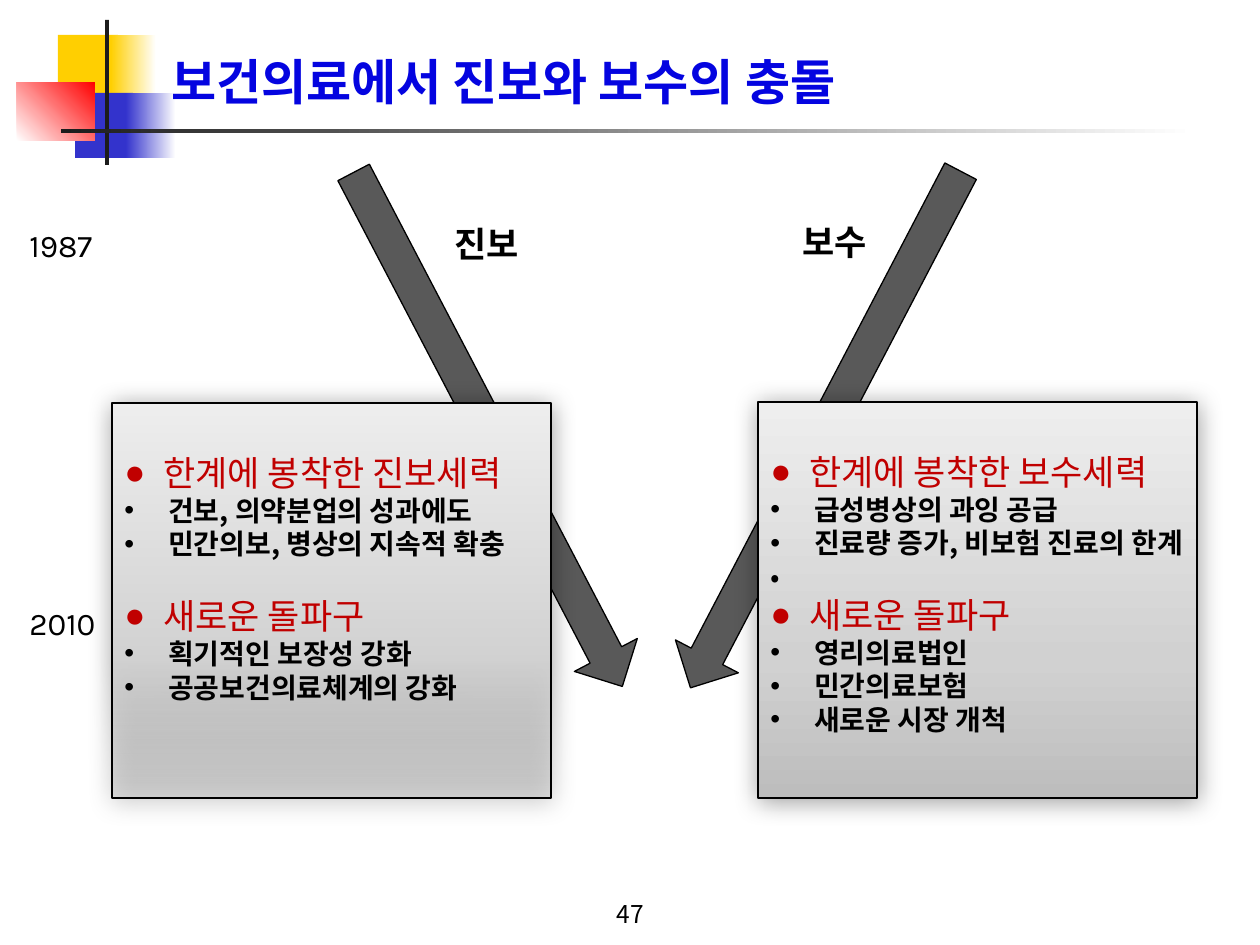
from pptx import Presentation
from pptx.dml.color import RGBColor as Rgb
from pptx.enum.shapes import MSO_SHAPE as Kind
from pptx.enum.text import MSO_ANCHOR as Anchor, MSO_AUTO_SIZE as Fit, PP_ALIGN as Align
from pptx.oxml import parse_xml
from pptx.oxml.ns import nsdecls, qn
from pptx.util import Pt

SCALE = 914400 / 126
WHITE = Rgb(255, 255, 255)
BLACK = Rgb(0, 0, 0)
INK = Rgb(0x1C, 0x1C, 0x1C)
GOLD = Rgb(0xFF, 0xCF, 0x01)
NAVY = Rgb(0x33, 0x33, 0xCC)
RED = Rgb(0xFF, 0, 0)
BLUE = Rgb(0x04, 0x04, 0xE0)
BRICK = Rgb(0xC0, 0, 0)
GRAY = Rgb(0x59, 0x59, 0x59)
DARK = Rgb(0xBD, 0xBD, 0xBD)
MID = Rgb(0xD1, 0xD1, 0xD1)
LIGHT = Rgb(0xEE, 0xEE, 0xEE)
SANS = "Noto Sans CJK KR"


def px(n):
    return round(n * SCALE)


def style(par, size, color, font=SANS, bold=False):
    for run in par.runs:
        run.font.size = Pt(size)
        run.font.bold = bold
        run.font.color.rgb = color
        run.font.name = font
        east = parse_xml(f'<a:ea {nsdecls("a")} typeface="{SANS}"/>')
        run.font._element.find(qn("a:latin")).addnext(east)


def shade(shape, stops, angle):
    marks = "".join(
        f'<a:gs pos="{pos * 1000}"><a:srgbClr val="{color}">'
        f'<a:alpha val="{alpha * 1000}"/></a:srgbClr></a:gs>'
        for pos, color, alpha in stops)
    fill = parse_xml(f'<a:gradFill {nsdecls("a")} rotWithShape="1"><a:gsLst>{marks}'
                     f'</a:gsLst><a:lin ang="{angle * 60000}" scaled="0"/></a:gradFill>')
    shape.element.spPr.find(qn("a:prstGeom")).addnext(fill)


def block(slide, kind, box, fill=None, line=None):
    shape = slide.shapes.add_shape(kind, *map(px, box))
    shape.shadow.inherit = False
    if fill is not None:
        shape.fill.solid()
        shape.fill.fore_color.rgb = fill
    if line is None:
        shape.line.fill.background()
    else:
        shape.line.color.rgb = line
        shape.line.width = Pt(0.75)
    return shape


def emblem(slide, x, y):
    def bar(dx, dy, w, h, start, end=None, angle=0):
        box = (x + dx, y + dy, w, h)
        shape = block(slide, Kind.RECTANGLE, box, start if end is None else None)
        if end is not None:
            shade(shape, [(0, start, 100), (100, end, 100)], angle)

    bar(41, 15, 60, 65, GOLD)
    bar(94, 15, 45, 65, GOLD, WHITE)
    bar(58, 73, 58, 65, NAVY)
    bar(109, 73, 50, 65, NAVY, WHITE)
    bar(0, 62, 78, 59, WHITE, RED, 315)
    bar(88, 0, 4, 145, INK)
    bar(44, 109, 1134, 4, INK, WHITE)


def head(slide, text, box):
    title = slide.shapes.title
    title.left, title.top, title.width, title.height = map(px, box)
    frame = title.text_frame
    frame.text = text
    frame.auto_size = Fit.NONE
    frame.word_wrap = True
    frame.vertical_anchor = Anchor.BOTTOM
    frame.paragraphs[0].alignment = Align.LEFT
    style(frame.paragraphs[0], 28, BLUE, "Arial", True)
    title.element.getparent().append(title.element)


def label(slide, text, box, size, font=SANS, bold=False, align=Align.LEFT):
    frame = slide.shapes.add_textbox(*map(px, box)).text_frame
    frame.text = text
    frame.word_wrap = True
    frame.vertical_anchor = Anchor.MIDDLE
    frame.paragraphs[0].alignment = align
    style(frame.paragraphs[0], size, BLACK, font, bold)


def arrow(slide, box, turn):
    block(slide, Kind.RIGHT_ARROW, box, GRAY, BLACK).rotation = turn


def bullet(par, mark, indent):
    props = par._p.get_or_add_pPr()
    props.set("marL", str(px(indent)))
    props.set("indent", str(-px(indent)))
    props.append(parse_xml(f'<a:buFont {nsdecls("a")} typeface="Arial"/>'))
    props.append(parse_xml(f'<a:buChar {nsdecls("a")} char="{mark}"/>'))


def panel(slide, box, groups, alpha, gap):
    shape = block(slide, Kind.RECTANGLE, box, line=BLACK)
    shade(shape, [(0, DARK, alpha), (35, MID, 100), (100, LIGHT, 100)], 270)
    shape.element.spPr.find(qn("a:effectLst")).append(parse_xml(
        f'<a:outerShdw {nsdecls("a")} blurRad="{Pt(15)}" dist="{Pt(1.6)}" dir="5400000" '
        'rotWithShape="0"><a:srgbClr val="000000"><a:alpha val="38000"/>'
        '</a:srgbClr></a:outerShdw>'))
    frame = shape.text_frame
    frame.word_wrap = False
    frame.vertical_anchor = Anchor.TOP
    frame.margin_top = px(48)
    par = frame.paragraphs[0]
    for i, (name, items) in enumerate(groups):
        if i:
            par = frame.add_paragraph()
            par.space_before = px(gap)
        par.text = name
        par.alignment = Align.LEFT
        par.line_spacing = Pt(24)
        bullet(par, "●", 39)
        style(par, 20, BRICK)
        for item in items:
            par = frame.add_paragraph()
            par.text = item
            par.alignment = Align.LEFT
            par.line_spacing = Pt(19.25)
            if item != "•":
                bullet(par, "•", 44)
            style(par, 16, BLACK, bold=item != "•")


def main():
    deck = Presentation()
    deck.slide_width, deck.slide_height = px(1260), px(945)
    slide = deck.slides.add_slide(deck.slide_layouts[5])
    emblem(slide, 17, 20)
    head(slide, "보건의료에서 진보와 보수의 충돌", (159, 29, 1074, 88))
    label(slide, "47", (431, 894, 399, 39), 14, align=Align.CENTER)
    for year, y in (("1987", 222), ("2010", 600)):
        label(slide, year, (17, y, 96, 46), 18, "Karla")
    for side, x, y in (("진보", 442, 216), ("보수", 790, 214)):
        label(slide, side, (x, y, 96, 55), 20, bold=True)
    arrow(slide, (198, 394, 580, 71), 62.4)
    arrow(slide, (534, 394, 583, 71), 117.6)
    panel(slide, (758, 402, 439, 396), [
        ("한계에 봉착한 보수세력", ["급성병상의 과잉 공급", "진료량 증가, 비보험 진료의 한계", "•"]),
        ("새로운 돌파구", ["영리의료법인", "민간의료보험", "새로운 시장 개척"]),
    ], 100, 0)
    panel(slide, (112, 403, 439, 395), [
        ("한계에 봉착한 진보세력", ["건보, 의약분업의 성과에도", "민간의보, 병상의 지속적 확충"]),
        ("새로운 돌파구", ["획기적인 보장성 강화", "공공보건의료체계의 강화"]),
    ], 44, 34)
    deck.save("out.pptx")


if __name__ == "__main__":
    main()
